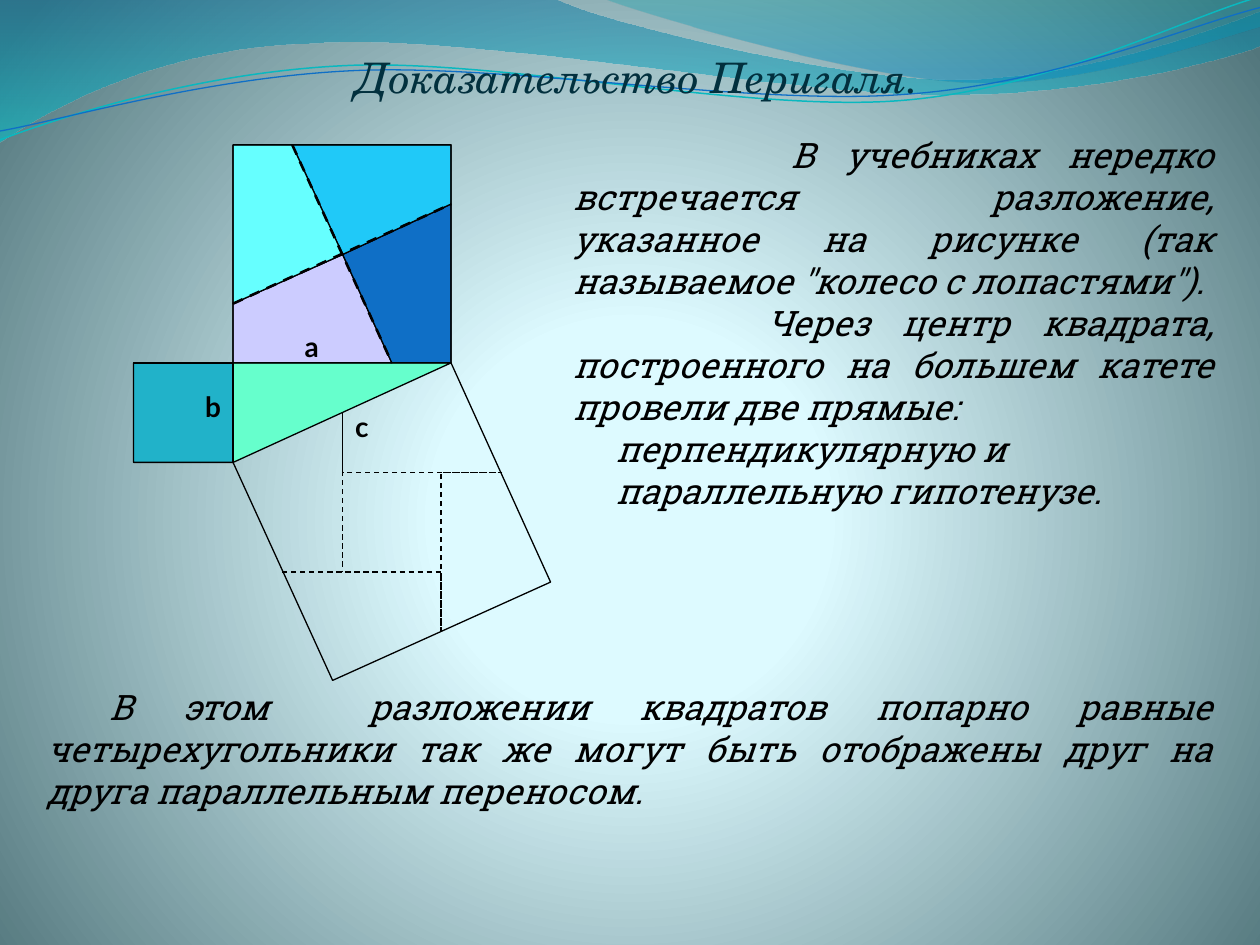
from lxml import etree
from pptx import Presentation
from pptx.dml.color import RGBColor
from pptx.enum.dml import MSO_LINE
from pptx.enum.shapes import MSO_CONNECTOR, MSO_SHAPE
from pptx.enum.text import MSO_ANCHOR, PP_ALIGN
from pptx.oxml.ns import qn
from pptx.util import Inches, Pt

DASH = MSO_LINE.DASH
LEFT, MID, JUST = PP_ALIGN.LEFT, PP_ALIGN.CENTER, PP_ALIGN.JUSTIFY
TOP, BASE = MSO_ANCHOR.TOP, MSO_ANCHOR.BOTTOM
HEX = {
    "black": "000000", "title": "02303E", "green": "66FFCC", "teal": "21B2C9",
    "lilac": "CCCCFF", "blue": "0F6FC6", "sky": "20C9F8", "aqua": "66FFFF",
    "cyan": "0AB8BF", "glow": "DEFBFF", "pale": "DDFAFF", "slate": "52767C",
    "deep": "0074A1", "sea": "00C6CF", "jade": "00A1A9", "azure": "008BBF",
}
RGB = {name: RGBColor.from_string(code) for name, code in HEX.items()}

prs = Presentation()
prs.slide_width, prs.slide_height = Inches(10), Inches(7.5)
slide = prs.slides.add_slide(prs.slide_layouts[6])
shapes = slide.shapes


def draw(path, fill=None, line=None, width=0.75, close=True):
    dots = [(Inches(part[i]), Inches(part[i + 1]))
            for part in path for i in range(0, len(part), 2)]
    pen = shapes.build_freeform(*dots[0], scale=1.0)
    pen.add_line_segments(dots[1:], close=close)
    shape = pen.convert_to_shape()
    legs = iter(list(shape.element.iter(qn("a:lnTo"))))
    for part in path[1:]:
        leg = next(legs)
        if len(part) == 6:
            bend = etree.Element(qn("a:cubicBezTo"))
            leg.addprevious(bend)
            for old in (leg, next(legs), next(legs)):
                bend.append(old[0])
                old.getparent().remove(old)
    shape.shadow.inherit = False
    shape.fill.background()
    if fill:
        shape.fill.solid()
        shape.fill.fore_color.rgb = RGB[fill]
    shape.line.fill.background()
    if line:
        shape.line.color.rgb = RGB[line]
        shape.line.width = Pt(width)
    return shape


def blend(fill, root, stops, focus=None):
    fill.gradient()
    node = next(root.iter(qn("a:gradFill")))
    for child in list(node):
        node.remove(child)
    row = etree.SubElement(node, qn("a:gsLst"))
    for pos, name, alpha in stops:
        stop = etree.SubElement(row, qn("a:gs"), pos=str(pos * 1000))
        tint = etree.SubElement(stop, qn("a:srgbClr"), val=HEX[name])
        if alpha < 100:
            etree.SubElement(tint, qn("a:alpha"), val=str(alpha * 1000))
    if focus:
        ring = etree.SubElement(node, qn("a:path"), path="circle")
        sides = {side: str(v * 1000) for side, v in zip("ltrb", focus)}
        etree.SubElement(ring, qn("a:fillToRect"), **sides)
    else:
        etree.SubElement(node, qn("a:lin"), ang="5400000", scaled="1")


blend(slide.background.fill, slide.element,
      [(0, "glow", 100), (25, "pale", 100), (100, "slate", 100)], (10, 110, 10, 100))

bands = [
    ([(0, 0), (4.4, -0.01), (4.76, 0.17, 6.64, 0.63, 7.58, 0.63),
      (8.53, 0.63, 9.58, 0.26, 10, 0.09), (10.01, 0.36),
      (9.83, 0.44, 8.7, 0.76, 7.46, 0.75), (6.22, 0.75, 3.82, 0.28, 2.57, 0.34),
      (1.29, 0.36, 0.46, 0.83, -0.01, 1.13)],
     [(0, "deep", 45), (100, "sea", 55)]),
    ([(4.79, -0.01), (5.09, 0.11, 6.82, 0.62, 7.69, 0.65),
      (8.56, 0.69, 9.61, 0.32, 10, 0.21), (10, 0)],
     [(0, "jade", 30), (80, "azure", 45)]),
]
for path, stops in bands:
    band = draw(path)
    blend(band.fill, band.element, stops)

draw([(0, 1.11), (0.48, 0.93, 1.58, 0.57, 2.77, 0.52), (3.95, 0.47, 5.93, 0.89, 7.13, 0.8),
      (8.33, 0.71, 9.38, 0.15, 9.98, -0.02)], line="cyan", width=0.85, close=False)
draw([(0, 1.04), (0.47, 0.96, 1.64, 0.61, 2.83, 0.56), (4.03, 0.51, 5.97, 0.84, 7.17, 0.75),
      (8.36, 0.67, 9.41, 0.21, 10, 0.06)], line="blue", close=False)

basics = [
    (MSO_SHAPE.RIGHT_TRIANGLE, (2.32, 2.41, 0.79, 1.73), 90, "green"),
    (MSO_SHAPE.RECTANGLE, (1.06, 2.88, 0.79, 0.79), 0, "teal"),
]
for kind, box, turn, name in basics:
    shape = shapes.add_shape(kind, *map(Inches, box))
    shape.rotation = turn
    shape.shadow.inherit = False
    shape.fill.solid()
    shape.fill.fore_color.rgb = RGB[name]
    shape.line.color.rgb = RGB["black"]
    shape.line.width = Pt(0.75)

hub = (2.72, 2.02)
north, east, south, west = (2.32, 1.15), (3.58, 1.62), (3.11, 2.88), (1.85, 2.41)
blades = [
    (south, (1.85, 2.88), west, "lilac"),
    (east, (3.58, 2.88), south, "blue"),
    (north, (3.58, 1.15), east, "sky"),
    (west, (1.85, 1.15), north, "aqua"),
]
for start, corner, end, name in blades:
    draw([start, corner, end, hub], name, "black")

draw([(1.85, 2.88), (1.85, 1.15), (3.58, 1.15), (3.58, 2.88), (4.37, 4.62), (2.64, 5.4),
      (1.85, 3.67), (1.06, 3.67), (1.06, 2.88)], line="black")
wheel = draw([(2.24, 4.54), (3.5, 4.54), (3.5, 5.01), (3.5, 3.75), (3.98, 3.75),
              (2.72, 3.75), (2.72, 3.28), (2.72, 4.54)], line="black", close=False)
wheel.line.dash_style = DASH

for start, end in [(north, south), (west, east)]:
    cut = shapes.add_connector(MSO_CONNECTOR.STRAIGHT, *map(Inches, start + end))
    cut.line.color.rgb = RGB["black"]
    cut.line.width = Pt(1.5)
    cut.line.dash_style = DASH
    etree.SubElement(cut.element.spPr, qn("a:effectLst"))

head = ("TeX Gyre Schola", 24, "title", False, True)
body = ("Roboto Slab", 20, "black", False, True)
mark = ("Lato", 16, "black", True, False)
pad = (0.1, 0.05, 0.1, 0.05)
texts = [
    ((0.94, 0.31, 8.25, 0.5), True, BASE, (0, 0.05, 0, 0), head,
     [("Доказательство Перигаля.", MID, 0, 0)]),
    ((4.45, 1.01, 5.28, 3.13), True, TOP, pad, body, [
        ("В учебниках нередко встречается разложение, указанное на рисунке "
         "(так называемое \"колесо с лопастями\"). ", JUST, 0, 1.73),
        ("Через центр квадрата, построенного на большем катете "
         "провели две прямые:", JUST, 0, 1.53),
        ("перпендикулярную и", LEFT, 0.34, 0),
        ("параллельную гипотенузе.", LEFT, 0.34, 0)]),
    ((0.27, 5.39, 9.45, 1.51), True, TOP, pad, body, [
        ("В этом  разложении квадратов попарно равные четырехугольники так же "
         "могут быть отображены друг на друга параллельным переносом. ", JUST, 0, 0.5)]),
]
for sign, x, y, width in [("b", 1.53, 3.04, 0.34), ("а", 2.32, 2.57, 0.32), ("с", 2.72, 3.2, 0.32)]:
    texts.append(((x, y, width, 0.37), False, TOP, pad, mark, [(sign, JUST, 0, 0)]))

for box, wrap, anchor, pads, style, lines in texts:
    frame = shapes.add_textbox(*map(Inches, box)).text_frame
    frame.word_wrap = wrap
    frame.vertical_anchor = anchor
    (frame.margin_left, frame.margin_top,
     frame.margin_right, frame.margin_bottom) = map(Inches, pads)
    for i, (words, align, left, first) in enumerate(lines):
        para = frame.add_paragraph() if i else frame.paragraphs[0]
        para.text = words
        para.alignment = align
        props = para._p.get_or_add_pPr()
        props.set("marL", str(Inches(left)))
        props.set("indent", str(Inches(first)))
        font = para.font
        font.name, font.size = style[0], Pt(style[1])
        font.color.rgb = RGB[style[2]]
        font.bold, font.italic = style[3:]

prs.save("out.pptx")
